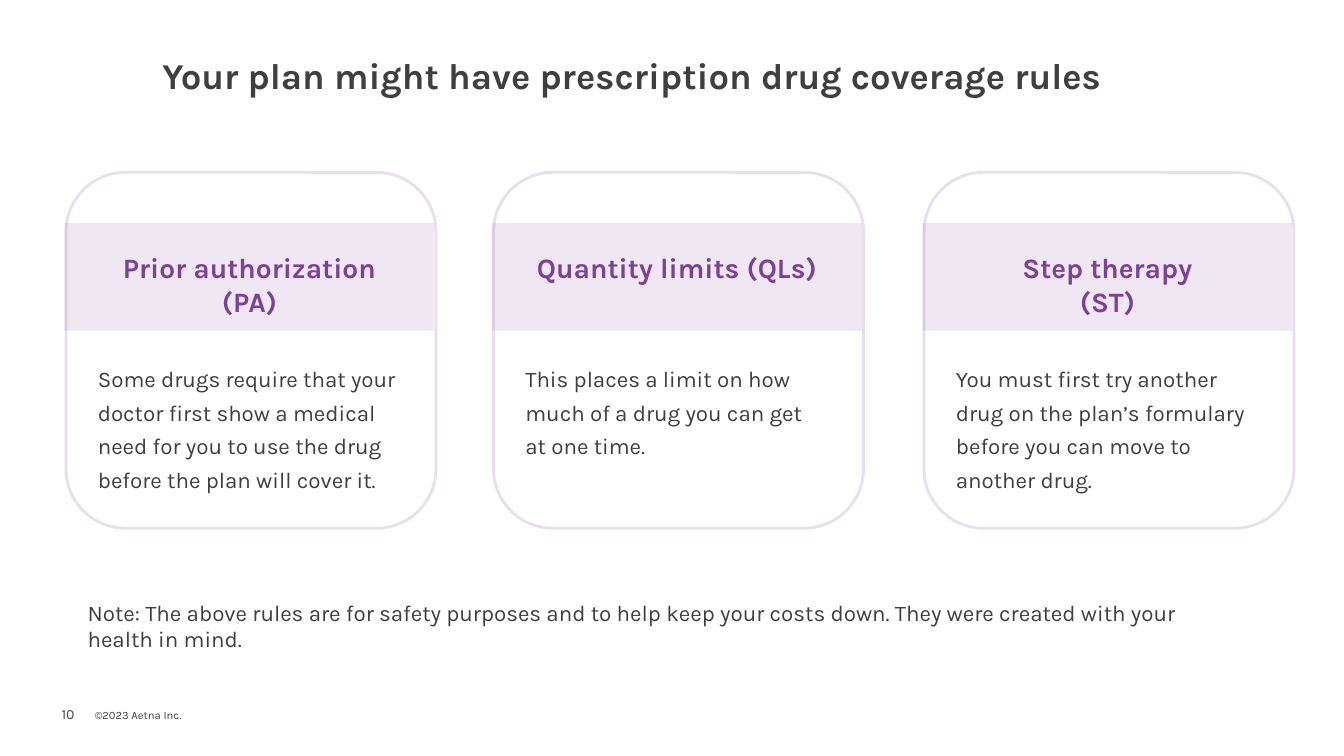
from dataclasses import dataclass

from lxml import etree
from pptx import Presentation
from pptx.dml.color import RGBColor
from pptx.enum.shapes import MSO_SHAPE
from pptx.enum.text import MSO_ANCHOR, MSO_AUTO_SIZE, PP_ALIGN
from pptx.oxml.ns import qn
from pptx.shapes.autoshape import Shape
from pptx.slide import Slide
from pptx.util import Inches, Pt

TOP, MIDDLE, BOTTOM = MSO_ANCHOR.TOP, MSO_ANCHOR.MIDDLE, MSO_ANCHOR.BOTTOM
LEFT, CENTER = PP_ALIGN.LEFT, PP_ALIGN.CENTER
RECTANGLE, ROUNDED = MSO_SHAPE.RECTANGLE, MSO_SHAPE.ROUNDED_RECTANGLE
NO_AUTOFIT = MSO_AUTO_SIZE.NONE

SLIDE_WIDTH, SLIDE_HEIGHT = Inches(13.33), Inches(7.5)
FONT = "Karla"
COLORS = {"text": "3F3F3F", "heading": "7D3F98", "band": "EFE7F2", "outline": "7E4098"}
OUTLINE_OPACITY = 17
CARD_WIDTH = 27.53


@dataclass(frozen=True)
class Area:
    """Left and width as percent of the slide's width, top and height of its height."""
    left: float
    top: float
    width: float
    height: float

    def emu(self) -> tuple[int, int, int, int]:
        return (
            round(SLIDE_WIDTH * self.left / 100),
            round(SLIDE_HEIGHT * self.top / 100),
            round(SLIDE_WIDTH * self.width / 100),
            round(SLIDE_HEIGHT * self.height / 100),
        )


@dataclass(frozen=True)
class TextStyle:
    size: float
    color: str = "text"
    bold: bool = False
    align: PP_ALIGN = LEFT
    anchor: MSO_ANCHOR = TOP
    line_spacing: float = 1.0
    side_inset: float = 0.0
    end_inset: float = 0.0


@dataclass(frozen=True)
class RuleCard:
    left: float
    heading: str
    body: str
    body_width: float


TITLE = TextStyle(26, bold=True, line_spacing=0.9)
HEADING = TextStyle(20, "heading", True, CENTER, side_inset=0.3, end_inset=0.05)
BODY = TextStyle(16, line_spacing=1.25, side_inset=0.3, end_inset=0.05)
NOTE = TextStyle(16, side_inset=0.1, end_inset=0.05)
PAGE_NUMBER = TextStyle(10, anchor=MIDDLE, end_inset=0.05)
COPYRIGHT = TextStyle(8, anchor=BOTTOM)

CARDS = [
    RuleCard(4.8, "Prior authorization (PA)",
             "Some drugs require that your doctor first show a medical need "
             "for you to use the drug before the plan will cover it.", 27.61),
    RuleCard(36.61, "Quantity limits (QLs)",
             "This places a limit on how much of a drug you can get at one time.", 26.33),
    RuleCard(68.64, "Step therapy\v(ST)",
             "You must first try another drug on the plan’s formulary "
             "before you can move to another drug.", 27.31),
]


def write(box: Shape, text: str, style: TextStyle) -> None:
    frame = box.text_frame
    frame.text = text
    frame.word_wrap = True
    frame.auto_size = NO_AUTOFIT
    frame.vertical_anchor = style.anchor
    frame.margin_left = frame.margin_right = Inches(style.side_inset)
    frame.margin_top = frame.margin_bottom = Inches(style.end_inset)
    para = frame.paragraphs[0]
    para.alignment = style.align
    para.line_spacing = style.line_spacing
    for span in para.runs:
        span.font.name = FONT
        span.font.size = Pt(style.size)
        span.font.bold = style.bold
        span.font.color.rgb = RGBColor.from_string(COLORS[style.color])


def add_text(page: Slide, area: Area, text: str, style: TextStyle) -> None:
    write(page.shapes.add_textbox(*area.emu()), text, style)


def add_band(page: Slide, area: Area) -> None:
    band = page.shapes.add_shape(RECTANGLE, *area.emu())
    band.shadow.inherit = False
    band.fill.solid()
    band.fill.fore_color.rgb = RGBColor.from_string(COLORS["band"])
    band.line.fill.background()


def add_outline(page: Slide, area: Area) -> None:
    """Draw an unfilled rounded frame with a see-through line."""
    frame = page.shapes.add_shape(ROUNDED, *area.emu())
    frame.shadow.inherit = False
    frame.fill.background()
    frame.line.width = Pt(2)
    frame.line.color.rgb = RGBColor.from_string(COLORS["outline"])
    color = frame.line._get_or_add_ln().find(".//" + qn("a:srgbClr"))
    etree.SubElement(color, qn("a:alpha")).set("val", str(OUTLINE_OPACITY * 1000))


def add_card(page: Slide, card: RuleCard) -> None:
    add_band(page, Area(card.left, 29.47, CARD_WIDTH, 14.27))
    add_text(page, Area(card.left + 0.23, 46.8, card.body_width, 26), card.body, BODY)
    add_text(page, Area(card.left, 32.53, CARD_WIDTH, 9.47), card.heading, HEADING)
    add_outline(page, Area(card.left + 0.11, 22.8, CARD_WIDTH, 47.07))


def main() -> None:
    deck = Presentation()
    deck.slide_width, deck.slide_height = SLIDE_WIDTH, SLIDE_HEIGHT
    page = deck.slides.add_slide(deck.slide_layouts.get_by_name("Title Only"))

    title = page.shapes.title
    title.left, title.top, title.width, title.height = Area(12.08, 7.73, 79.29, 10.4).emu()
    write(title, "Your plan might have prescription drug coverage rules", TITLE)

    for card in CARDS:
        add_card(page, card)

    add_text(page, Area(5.78, 78.53, 83.95, 8.53),
             "Note: The above rules are for safety purposes and to help keep your costs "
             "down. They were created with your health in mind.", NOTE)
    add_text(page, Area(4.58, 92.8, 2.93, 3.33), "10", PAGE_NUMBER)
    add_text(page, Area(7.05, 93.73, 66.02, 1.73), "©2023 Aetna Inc.", COPYRIGHT)
    deck.save("out.pptx")


if __name__ == "__main__":
    main()
